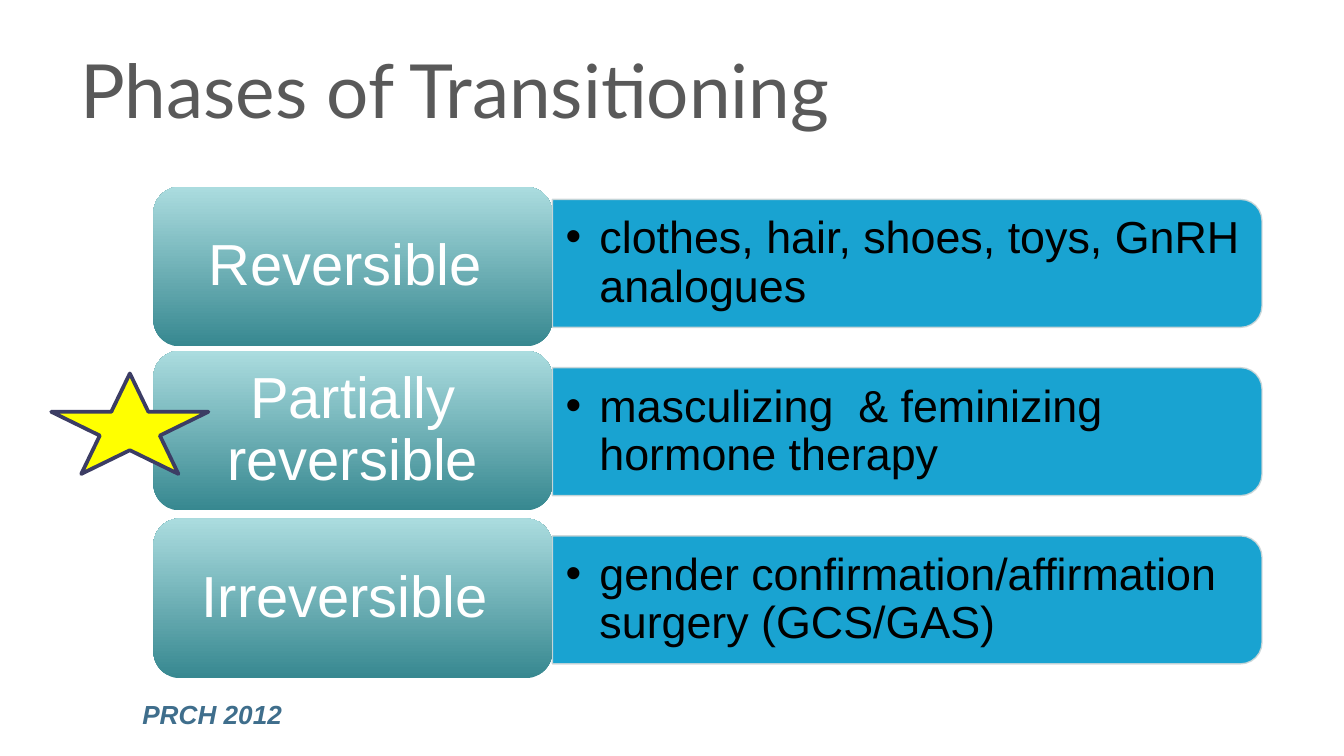
"""Build the slide on phases of transitioning."""
from lxml import etree
from pptx import Presentation
from pptx.dml.color import RGBColor
from pptx.enum import shapes, text
from pptx.oxml.ns import qn
from pptx.util import Cm, Pt

TITLE = "Phases of Transitioning"
PHASES = [
    (3.53, "Reversible ", "clothes, hair, shoes, toys, GnRH analogues"),
    (6.63, "Partially reversible", "masculizing  & feminizing hormone therapy"),
    (9.8, "Irreversible ", "gender confirmation/affirmation surgery (GCS/GAS)"),
]
SOURCE = "PRCH 2012"

GREY = RGBColor(0x59, 0x59, 0x59)
BLUE = RGBColor(0x00, 0x99, 0xCC)
EDGE = RGBColor(0xCD, 0xD7, 0xD8)
TEAL = RGBColor(0x37, 0x88, 0x90)
PALE_TEAL = RGBColor(0xAB, 0xDC, 0xDF)
YELLOW = RGBColor(0xFF, 0xFF, 0x00)
NAVY = RGBColor(0x3C, 0x3D, 0x64)
STEEL = RGBColor(0x3F, 0x6E, 0x8C)
BLACK = RGBColor(0, 0, 0)
WHITE = RGBColor(0xFF, 0xFF, 0xFF)

LABEL_X, LABEL_W, LABEL_H = 2.9, 7.54, 3.02
BAR_X, BAR_Y, BAR_W, BAR_H, BAR_STEP = 10.44, 3.77, 13.41, 2.42, 3.18
ROUNDING = 0.167


def write(s, words, size, color, font="Arial", inset=(0.25, 0.13),
          anchor=text.MSO_ANCHOR.MIDDLE):
    tf = s.text_frame
    tf.word_wrap = True
    tf.vertical_anchor = anchor
    tf.margin_left = tf.margin_right = Cm(inset[0])
    tf.margin_top = tf.margin_bottom = Cm(inset[1])
    p = tf.paragraphs[0]
    r = p.add_run()
    r.text = words
    r.font.size, r.font.name = Pt(size), font
    r.font.color.rgb = color
    return p, r


def add_text(slide, x, y, w, h, *args, **kwargs):
    s = slide.shapes.add_textbox(Cm(x), Cm(y), Cm(w), Cm(h))
    return write(s, *args, **kwargs)


def add_shape(slide, kind, x, y, w, h):
    s = slide.shapes.add_shape(kind, Cm(x), Cm(y), Cm(w), Cm(h))
    s.shadow.inherit = False
    return s


def set_alpha(fill_parent):
    for color in fill_parent.findall(qn("a:solidFill") + "/" + qn("a:srgbClr")):
        etree.SubElement(color, qn("a:alpha"), val="90000")


def add_bullet(p):
    pPr = p._p.get_or_add_pPr()
    pPr.set("marL", str(Cm(0.64)))
    pPr.set("indent", str(-Cm(0.64)))
    etree.SubElement(pPr, qn("a:buFont"), typeface="Arial")
    etree.SubElement(pPr, qn("a:buChar"), char="•")


def add_bar(slide, y, words):
    x = BAR_X + (BAR_W - BAR_H) / 2
    top = y + (BAR_H - BAR_W) / 2
    s = add_shape(slide, shapes.MSO_SHAPE.ROUND_2_SAME_RECTANGLE, x, top, BAR_H, BAR_W)
    s.rotation = 90
    s.adjustments[0], s.adjustments[1] = ROUNDING, 0
    s.fill.solid()
    s.fill.fore_color.rgb = BLUE
    s.line.color.rgb = EDGE
    s.line.width = Pt(0.75)
    set_alpha(s._element.spPr)
    set_alpha(s.line._ln)
    p, _ = add_text(slide, BAR_X, y + 0.12, BAR_W - 0.12, BAR_H - 0.24, words, 24, BLACK)
    p.line_spacing = 0.9
    add_bullet(p)


def add_label(slide, y, words):
    s = add_shape(slide, shapes.MSO_SHAPE.ROUNDED_RECTANGLE, LABEL_X, y, LABEL_W, LABEL_H)
    s.adjustments[0] = ROUNDING
    s.fill.gradient()
    s.fill.gradient_angle = 90
    for stop, color in zip(s.fill.gradient_stops, (TEAL, PALE_TEAL)):
        stop.color.rgb = color
    s.line.fill.background()
    p, _ = write(s, words, 31, WHITE, inset=(0.33, 0.15))
    p.alignment = text.PP_ALIGN.CENTER
    p.line_spacing = 0.9


def add_star(slide):
    s = add_shape(slide, shapes.MSO_SHAPE.STAR_5_POINT, 0.97, 7.06, 2.97, 1.9)
    s.adjustments[0] = 0.191
    s.fill.solid()
    s.fill.fore_color.rgb = YELLOW
    s.line.color.rgb = NAVY
    s.line.width = Pt(2)


def main():
    prs = Presentation()
    prs.slide_width, prs.slide_height = Cm(25.4), Cm(14.29)
    slide = prs.slides.add_slide(prs.slide_layouts[6])
    add_text(slide, 1.27, 0.56, 22.86, 2.24, TITLE, 40, GREY, "Lato", (0.25, 0.25))
    for i, (label_y, label, examples) in enumerate(PHASES):
        add_bar(slide, BAR_Y + i * BAR_STEP, examples)
        add_label(slide, label_y, label)
    add_star(slide)
    _, r = add_text(slide, 2.44, 13.08, 10, 0.86, SOURCE, 14, STEEL,
                    anchor=text.MSO_ANCHOR.TOP)
    r.font.bold = r.font.italic = True
    prs.save("out.pptx")


if __name__ == "__main__":
    main()
